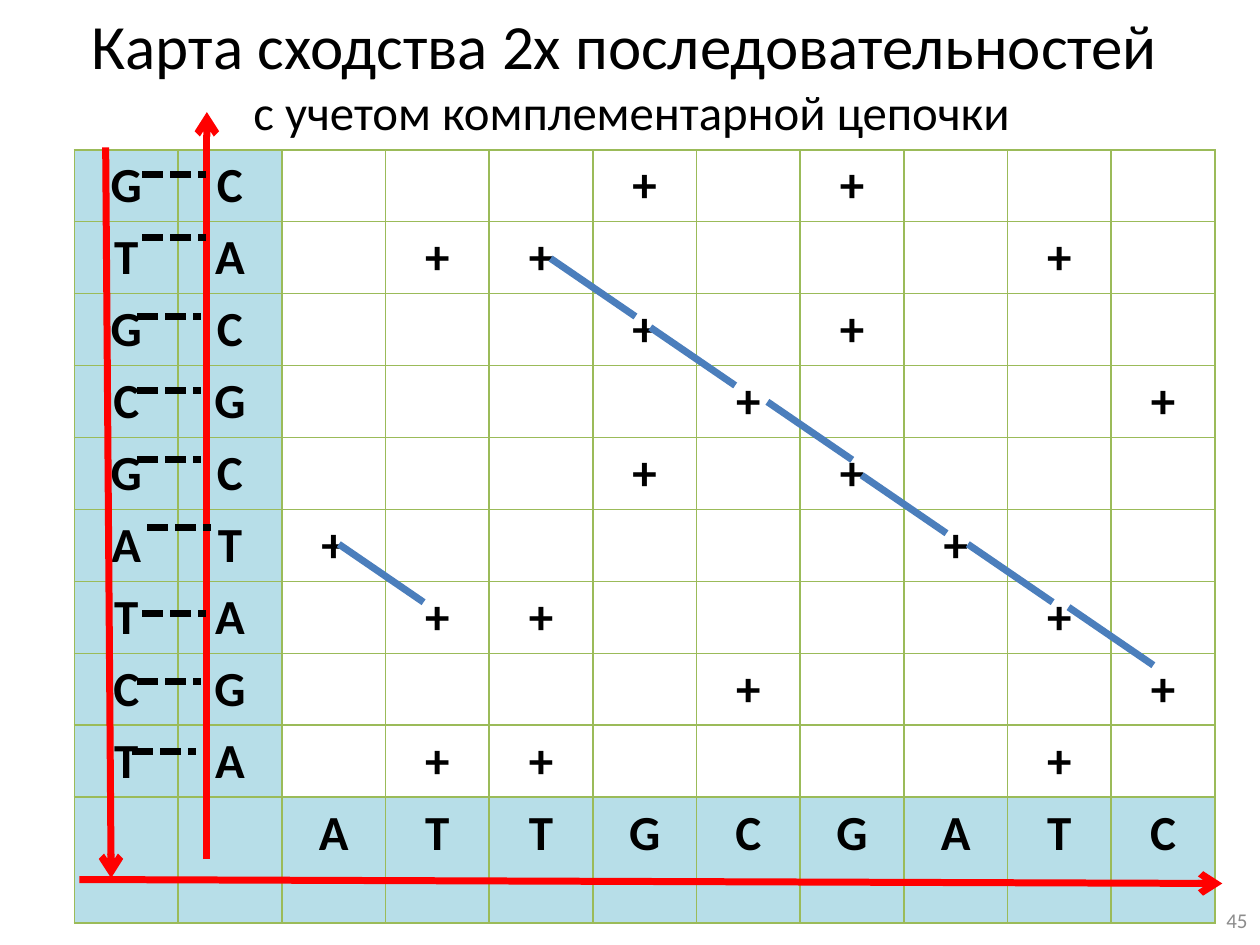
"""Build a dot-matrix slide comparing two DNA sequences with the complementary strand."""
from typing import NamedTuple, Optional

import pptx
import pptx.dml.color
import pptx.enum.dml
import pptx.enum.shapes
import pptx.enum.text
import pptx.oxml
import pptx.oxml.ns
import pptx.util

Cm, Pt = pptx.util.Cm, pptx.util.Pt
PP_ALIGN = pptx.enum.text.PP_ALIGN
ANCHOR = pptx.enum.text.MSO_ANCHOR

SIDE = "GTGCGATCT"
BOTTOM = "ATTGCGATC"
PAIRS = {"A": "T", "T": "A", "G": "C", "C": "G"}
GREEN, AQUA, WHITE, BLACK = "9BBB59", "B7DEE8", "FFFFFF", "000000"
BLUE, RED, GREY = "4B7EBC", "FF0000", "8C8C8C"


class Line(NamedTuple):
    x1: float
    y1: float
    x2: float
    y2: float
    color: str
    arrow: bool = False
    dashed: bool = False


MATCHES = [Line(x, y, x + 1.71, y + 1.17, BLUE) for x, y in (
    (11.1, 5.21), (13.11, 6.6), (15.47, 8.1), (17.37, 9.58),
    (19.51, 10.97), (21.54, 12.24), (6.83, 10.97))]
DIRECTIONS = [
    Line(1.6, 17.73, 24.64, 17.81, RED, arrow=True),
    Line(4.17, 17.32, 4.17, 2.26, RED, arrow=True),
    Line(2.13, 2.97, 2.24, 17.7, RED, arrow=True),
]
BONDS = [Line(x, y, x + 1.28, y, BLACK, dashed=True) for x, y in (
    (2.87, 3.51), (2.87, 4.78), (2.77, 6.38), (2.77, 7.87), (2.77, 9.27),
    (2.97, 10.64), (2.87, 12.37), (2.77, 13.74), (2.67, 15.14))]


def rgb(color: str) -> pptx.dml.color.RGBColor:
    return pptx.dml.color.RGBColor.from_string(color)


def add_text(p, text: str, *, size: float, color: str = BLACK, bold: bool = False,
             align=PP_ALIGN.CENTER) -> None:
    p.alignment = align
    r = p.add_run()
    r.text = text
    r.font.name, r.font.size, r.font.bold = "Calibri", Pt(size), bold
    r.font.color.rgb = rgb(color)


def add_box(s, x: float, y: float, w: float, h: float):
    tf = s.shapes.add_textbox(Cm(x), Cm(y), Cm(w), Cm(h)).text_frame
    tf.word_wrap = True
    tf.vertical_anchor = ANCHOR.MIDDLE
    return tf.paragraphs[0]


def add_line(s, line: Line) -> None:
    sp = s.shapes.add_connector(
        pptx.enum.shapes.MSO_CONNECTOR.STRAIGHT,
        Cm(line.x1), Cm(line.y1), Cm(line.x2), Cm(line.y2))
    sp.line.color.rgb = rgb(line.color)
    sp.line.width = Pt(4)
    if line.dashed:
        sp.line.dash_style = pptx.enum.dml.MSO_LINE.SQUARE_DOT
    if line.arrow:
        tail = pptx.oxml.parse_xml(
            f'<a:tailEnd {pptx.oxml.ns.nsdecls("a")} type="arrow"/>')
        sp.line._get_or_add_ln().append(tail)
    sp._element.spPr.append(
        pptx.oxml.parse_xml(f'<a:effectLst {pptx.oxml.ns.nsdecls("a")}/>'))


def style_cell(cell, text: str, fill: str) -> None:
    tcPr = cell._tc.get_or_add_tcPr()
    for side in "LRTB":
        tcPr.append(pptx.oxml.parse_xml(
            f'<a:ln{side} {pptx.oxml.ns.nsdecls("a")} w="{Pt(1)}"><a:solidFill>'
            f'<a:srgbClr val="{GREEN}"/></a:solidFill></a:ln{side}>'))
    cell.fill.solid()
    cell.fill.fore_color.rgb = rgb(fill)
    if text:
        add_text(cell.text_frame.paragraphs[0], text, size=28, bold=True)


def add_matrix(s, x: float, y: float, col_w: float, row_h: float, last_h: float) -> None:
    rows = [[a, PAIRS[a], *("+" if a == b else "" for b in BOTTOM)] for a in SIDE]
    rows.append(["", "", *BOTTOM])
    n_rows, n_cols = len(rows), len(rows[0])
    tbl = s.shapes.add_table(
        n_rows, n_cols, Cm(x), Cm(y), Cm(col_w * n_cols),
        Cm(row_h * (n_rows - 1) + last_h)).table
    tbl.first_row = tbl.horz_banding = False
    for col in tbl.columns:
        col.width = Cm(col_w)
    for i, row in enumerate(rows):
        last = i == n_rows - 1
        tbl.rows[i].height = Cm(last_h if last else row_h)
        for j, text in enumerate(row):
            style_cell(tbl.cell(i, j), text, AQUA if last or j < 2 else WHITE)


def main() -> None:
    prs = pptx.Presentation()
    prs.slide_width, prs.slide_height = Cm(25.4), Cm(19.05)
    s = prs.slides.add_slide(prs.slide_layouts[6])

    p = add_box(s, 1.14, 0.36, 23.19, 2.24)
    add_text(p, "Карта сходства 2х последовательностей ", size=36)
    p.add_line_break()
    add_text(p, "с учетом комплементарной цепочки", size=27.9)

    add_matrix(s, 1.5, 3.02, 2.09, 1.45, 2.54)
    p = add_box(s, 19.48, 18.03, 5.92, 1.02)
    add_text(p, "45", size=12, color=GREY, align=PP_ALIGN.RIGHT)

    for line in MATCHES + DIRECTIONS + BONDS:
        add_line(s, line)
    prs.save("out.pptx")


if __name__ == "__main__":
    main()
